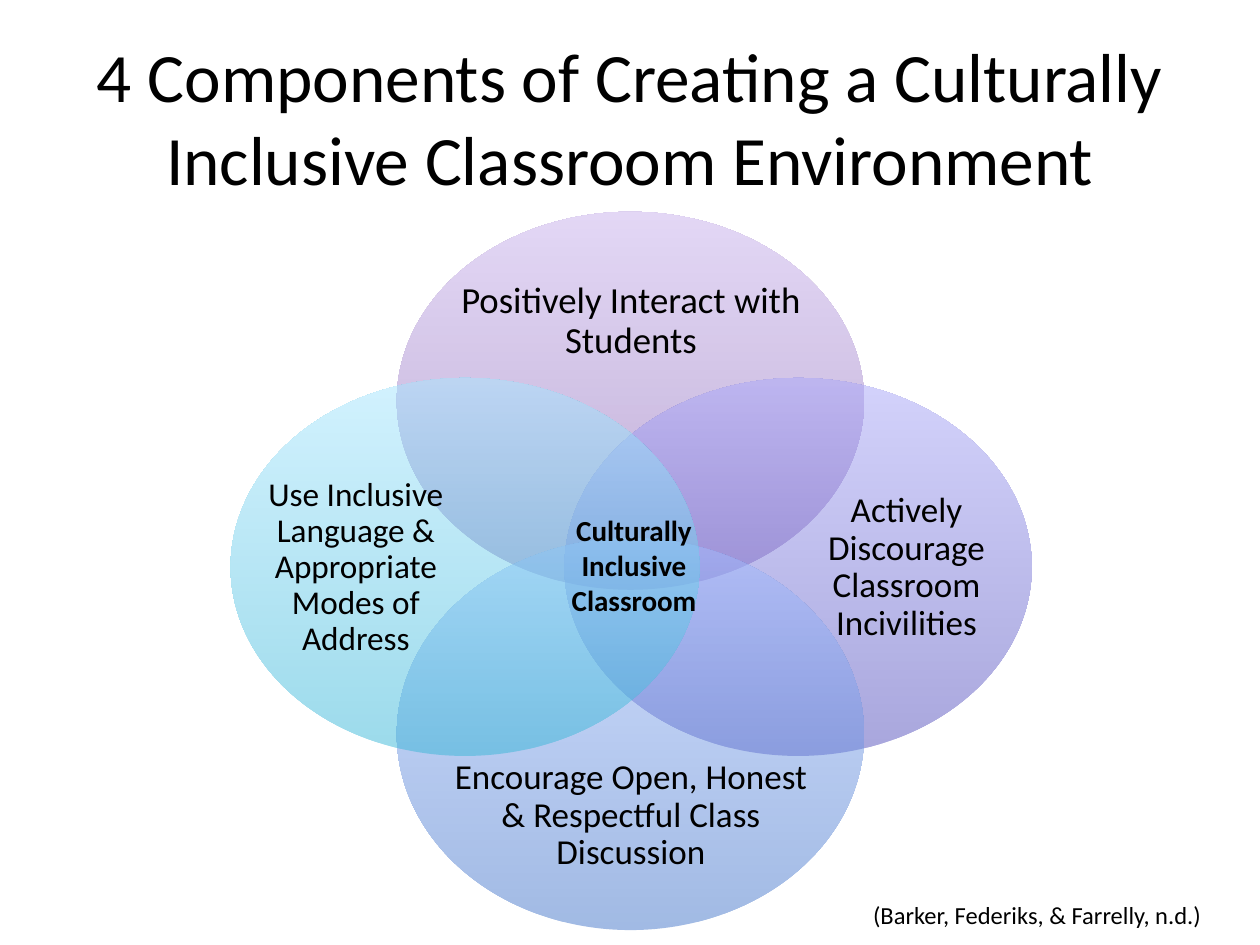
"""Build a slide with a four-part Venn diagram of an inclusive classroom."""
from dataclasses import dataclass

from lxml import etree
from pptx import Presentation
from pptx import util as u
from pptx.dml.color import RGBColor
from pptx.enum import shapes, text
from pptx.oxml import ns


@dataclass(frozen=True)
class Theme:
    """Hold the font, colours and type sizes."""
    font: str = "Calibri"
    ink: str = "000000"
    violet: tuple = ("7F5BAB", "C8B0ED")
    indigo: tuple = ("534FBB", "A9A7F9")
    blue: tuple = ("4476CA", "A4BDFF")
    cyan: tuple = ("39B7D8", "A7E6FF")
    alpha: int = 50
    title: float = 39.6
    large: float = 21
    normal: float = 20
    small: float = 19
    core: float = 16.6
    credit: float = 14


def write(frame, words, *, theme, size, bold=False, align=text.PP_ALIGN.CENTER,
          anchor=text.MSO_ANCHOR.MIDDLE, lead=None, inset=None):
    """Put words in a text frame with the given format."""
    frame.word_wrap = True
    frame.auto_size = text.MSO_AUTO_SIZE.NONE
    frame.vertical_anchor = anchor
    if inset is not None:
        frame.margin_left = frame.margin_right = u.Cm(inset)
        frame.margin_top = frame.margin_bottom = u.Cm(inset)
    para = frame.paragraphs[0]
    para.alignment = align
    if lead:
        para.line_spacing = lead
    run = para.add_run()
    run.text = words
    run.font.name = theme.font
    run.font.size = u.Pt(size)
    run.font.bold = bold
    run.font.color.rgb = RGBColor.from_string(theme.ink)


class Board:
    """Draw each kind of element on the current slide in one style."""

    def __init__(self, slide, theme):
        """Keep the slide and the theme."""
        self.slide = slide
        self.theme = theme

    def title(self, words, box):
        """Move and fill the title placeholder."""
        head = self.slide.shapes.title
        head.left, head.top, head.width, head.height = map(u.Cm, box)
        write(head.text_frame, words, theme=self.theme, size=self.theme.title)

    def label(self, words, box, **form):
        """Add a text box."""
        item = self.slide.shapes.add_textbox(*map(u.Cm, box))
        write(item.text_frame, words, theme=self.theme, **form)

    def oval(self, box, tones):
        """Add a see-through ellipse, dark at the foot and light at the top."""
        item = self.slide.shapes.add_shape(shapes.MSO_SHAPE.OVAL, *map(u.Cm, box))
        item.shadow.inherit = False
        item.line.fill.background()
        item.fill.gradient()
        item.fill.gradient_angle = 90
        for stop, tone in zip(item.fill.gradient_stops, tones):
            stop.color.rgb = RGBColor.from_string(tone)
        for tint in item.element.spPr.iter(ns.qn("a:srgbClr")):
            etree.SubElement(tint, ns.qn("a:alpha"), val=str(self.theme.alpha * 1000))

    def petal(self, words, size, tones, box, area):
        """Add one ellipse of the diagram and its label."""
        self.oval(box, tones)
        self.label(words, area, size=size, lead=0.9, inset=0)


def main():
    """Build and save the slide."""
    deck = Presentation()
    deck.slide_width, deck.slide_height = u.Cm(25.4), u.Cm(19.05)
    theme = Theme()
    board = Board(deck.slides.add_slide(deck.slide_layouts[5]), theme)
    board.title("4 Components of Creating a Culturally Inclusive Classroom Environment",
                (1.27, 0.76, 22.86, 3.18))

    petals = (
        ("Positively Interact with Students", theme.large, theme.violet,
         (8, 4.27, 9.42, 7.62), (9.09, 5.28, 7.26, 2.41)),
        ("Actively Discourage Classroom Incivilities", theme.normal, theme.indigo,
         (11.38, 7.62, 9.42, 7.62), (16.46, 8.51, 3.63, 5.87)),
        ("Encourage Open, Honest & Respectful Class Discussion", theme.normal, theme.blue,
         (8, 10.85, 9.42, 7.9), (9.09, 15.19, 7.26, 2.51)),
        ("Use Inclusive Language & Appropriate Modes of Address", theme.small, theme.cyan,
         (4.65, 7.62, 9.45, 7.62), (5.36, 8.51, 3.63, 5.87)),
    )
    for petal in petals:
        board.petal(*petal)

    board.label("Culturally Inclusive Classroom", (11.18, 10.21, 3.2, 2.57),
                size=theme.core, bold=True, anchor=text.MSO_ANCHOR.TOP)
    board.label("(Barker, Federiks, & Farrelly, n.d.)", (17.35, 18.01, 9.27, 0.86),
                size=theme.credit, align=text.PP_ALIGN.LEFT, anchor=text.MSO_ANCHOR.TOP)
    deck.save("out.pptx")


if __name__ == "__main__":
    main()
